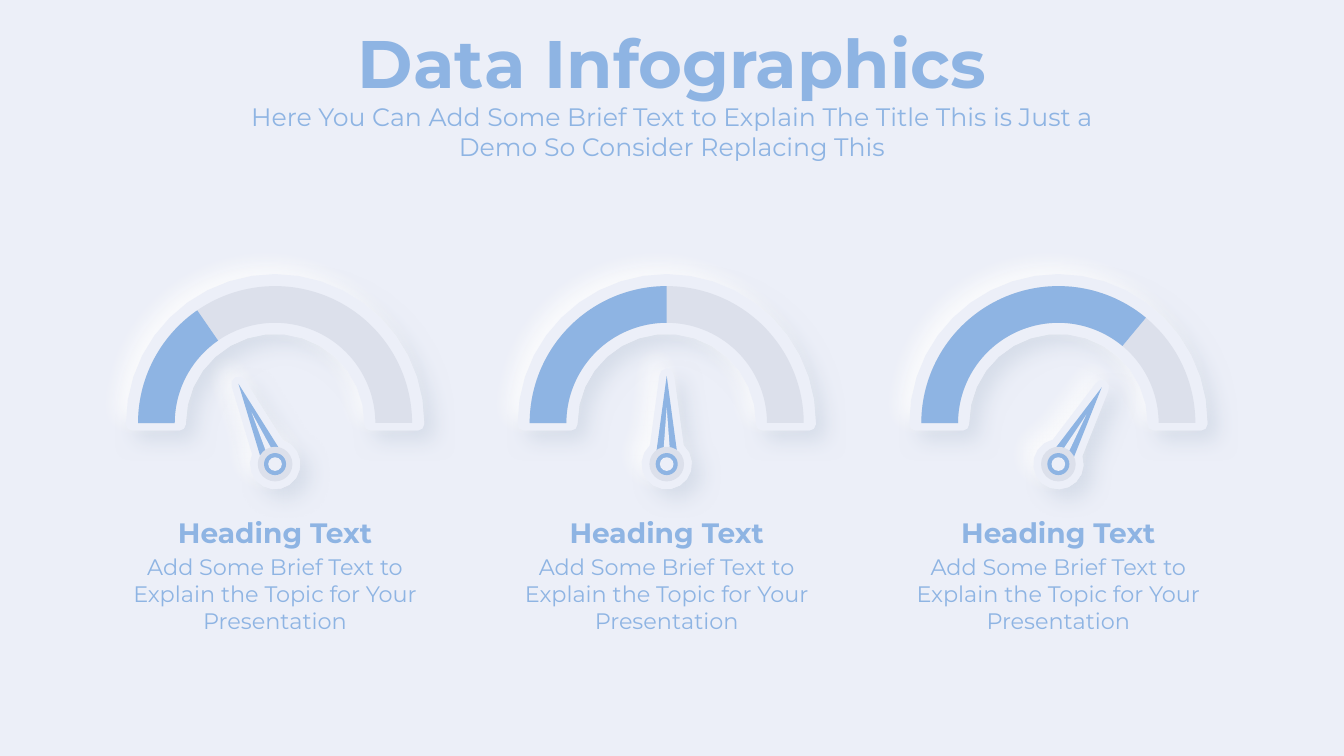
from dataclasses import dataclass
from math import cos, radians, sin, sqrt

from lxml.etree import SubElement
from pptx import Presentation
from pptx.dml.color import RGBColor
from pptx.enum.shapes import MSO_SHAPE as Shape
from pptx.enum.text import MSO_AUTO_SIZE as AutoSize, PP_ALIGN as Align
from pptx.oxml.ns import qn
from pptx.util import Pt

PX = 9525
CENTER_Y = 403
HUB_Y = 442
BODY = "Add Some Brief Text to Explain the Topic for Your Presentation"
SUBTITLE = ("Here You Can Add Some Brief Text to Explain The Title "
            "This is Just a Demo So Consider Replacing This")


@dataclass(frozen=True)
class Theme:
    """Colours, font and type sizes of the slide."""
    surface: str = "ECEFF8"
    accent: str = "8EB4E3"
    track: str = "DCE0EB"
    shade: str = "D1D9E6"
    light: str = "FFFFFF"
    font: str = "Montserrat"
    title: int = 48
    subtitle: int = 18
    heading: int = 20
    body: int = 16


THEME = Theme()


def add_text(page, center, top, width, height, text, size, bold=False):
    """Add a centred text box around a horizontal centre."""
    left = (center - width / 2) * PX
    box = page.shapes.add_textbox(round(left), top * PX, width * PX, height * PX)
    frame = box.text_frame
    frame.word_wrap = True
    frame.auto_size = AutoSize.SHAPE_TO_FIT_TEXT
    para = frame.paragraphs[0]
    para.text = text
    para.alignment = Align.CENTER
    para.font.name = THEME.font
    para.font.size = Pt(size)
    para.font.bold = bold
    para.font.color.rgb = RGBColor.from_string(THEME.accent)


def paint(shape, color):
    """Give a shape a flat fill with no line and no shadow."""
    shape.fill.solid()
    shape.fill.fore_color.rgb = RGBColor.from_string(color)
    shape.line.fill.background()
    shape.shadow.inherit = False


def add_shadow(shape, color, direction):
    """Cast a soft shadow towards a direction in degrees."""
    effects = shape._element.spPr.find(qn("a:effectLst"))
    shadow = SubElement(effects, qn("a:outerShdw"), blurRad=str(Pt(15)),
                        dist=str(Pt(10)), dir=str(direction * 60000),
                        algn="ctr", rotWithShape="0")
    tint = SubElement(shadow, qn("a:srgbClr"), val=color)
    SubElement(tint, qn("a:alpha"), val="80000")


def arc(x, y, radius, start, end):
    """Return points along an arc, with angles clockwise from the right."""
    steps = max(2, round(abs(end - start) * sqrt(radius) / 108))
    angles = [radians(start + (end - start) * i / steps) for i in range(steps + 1)]
    return [(x + radius * cos(a), y + radius * sin(a)) for a in angles]


def add_outline(group, points, center, top, color, angle=0):
    """Draw a closed outline turned about its local zero point."""
    turn = radians(angle)
    placed = [(round((center + x * cos(turn) - y * sin(turn)) * PX),
               round((top + x * sin(turn) + y * cos(turn)) * PX))
              for x, y in points]
    builder = group.shapes.build_freeform(*placed[0], scale=1.0)
    builder.add_line_segments(placed[1:], close=True)
    shape = builder.convert_to_shape()
    paint(shape, color)
    return shape


def add_raised(group, points, center, top, angle=0):
    """Draw an outline twice, with a dark and a light soft shadow."""
    for color, direction in ((THEME.shade, 45), (THEME.light, 225)):
        shape = add_outline(group, points, center, top, THEME.surface, angle)
        add_shadow(shape, color, direction)


def add_round(group, kind, center, middle, diameter, color):
    """Add a round preset shape around a centre point."""
    shape = group.shapes.add_shape(
        kind, round((center - diameter / 2) * PX),
        round((middle - diameter / 2) * PX), diameter * PX, diameter * PX)
    paint(shape, color)
    return shape


def add_dial(page, center, sweep):
    """Add the raised frame, the track and the filled band."""
    group = page.shapes.add_group_shape()
    frame = (arc(0, 0, 142, 180, 360) + arc(136, 1, 6, 0, 90)
             + arc(91, 1, 6, 90, 180) + arc(0, 0, 85, 360, 180)
             + arc(-91, 1, 6, 0, 90) + arc(-136, 1, 6, 90, 180))
    add_raised(group, frame, center, CENTER_Y)
    for color, end in ((THEME.track, 359.9), (THEME.accent, 180 + sweep)):
        band = add_round(group, Shape.BLOCK_ARC, center, CENTER_Y, 261, color)
        for index, value in enumerate((180 * 0.6, end * 0.6, 0.134)):
            band.adjustments[index] = value


def add_needle(page, center, angle):
    """Add the raised needle and its hub."""
    group = page.shapes.add_group_shape()
    case = arc(0, -84, 7, 180, 360) + arc(0, 0, 24, -48, 228)
    add_raised(group, case, center, HUB_Y, angle)
    pointer = [(0, -84)] + arc(0, -3, 11, 0, 180)
    slot = [(0, -54)] + arc(0, 0, 4, 0, 180)
    add_outline(group, pointer, center, HUB_Y, THEME.accent, angle)
    add_outline(group, slot, center, HUB_Y, THEME.surface, angle)
    for diameter, color in ((33, THEME.track), (21, THEME.accent), (13, THEME.surface)):
        add_round(group, Shape.OVAL, center, HUB_Y, diameter, color)


def main():
    """Build the slide and save it."""
    deck = Presentation()
    deck.slide_width, deck.slide_height = 1280 * PX, 720 * PX
    page = deck.slides.add_slide(deck.slide_layouts[6])
    page.background.fill.solid()
    page.background.fill.fore_color.rgb = RGBColor.from_string(THEME.surface)

    add_text(page, 640, 16, 747, 87, "Data Infographics", THEME.title, True)
    add_text(page, 640, 92, 838, 68, SUBTITLE, THEME.subtitle)
    for index, (sweep, angle) in enumerate(((55.4, -24.5), (90, 0), (129.7, 29.5))):
        center = 262 + index * 373
        add_dial(page, center, sweep)
        add_needle(page, center, angle)
        add_text(page, center, 486, 252, 42, "Heading Text", THEME.heading, True)
        add_text(page, center, 522, 326, 87, BODY, THEME.body)
    deck.save("out.pptx")


if __name__ == "__main__":
    main()
